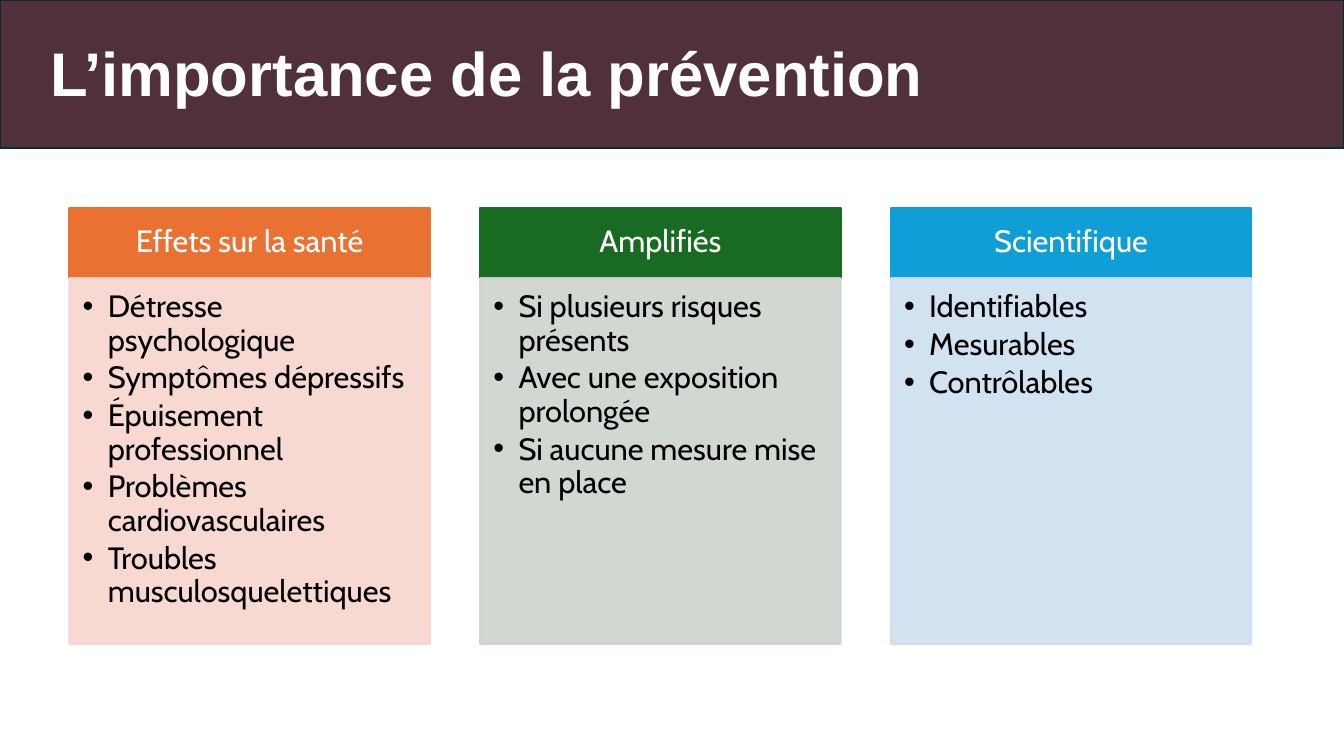
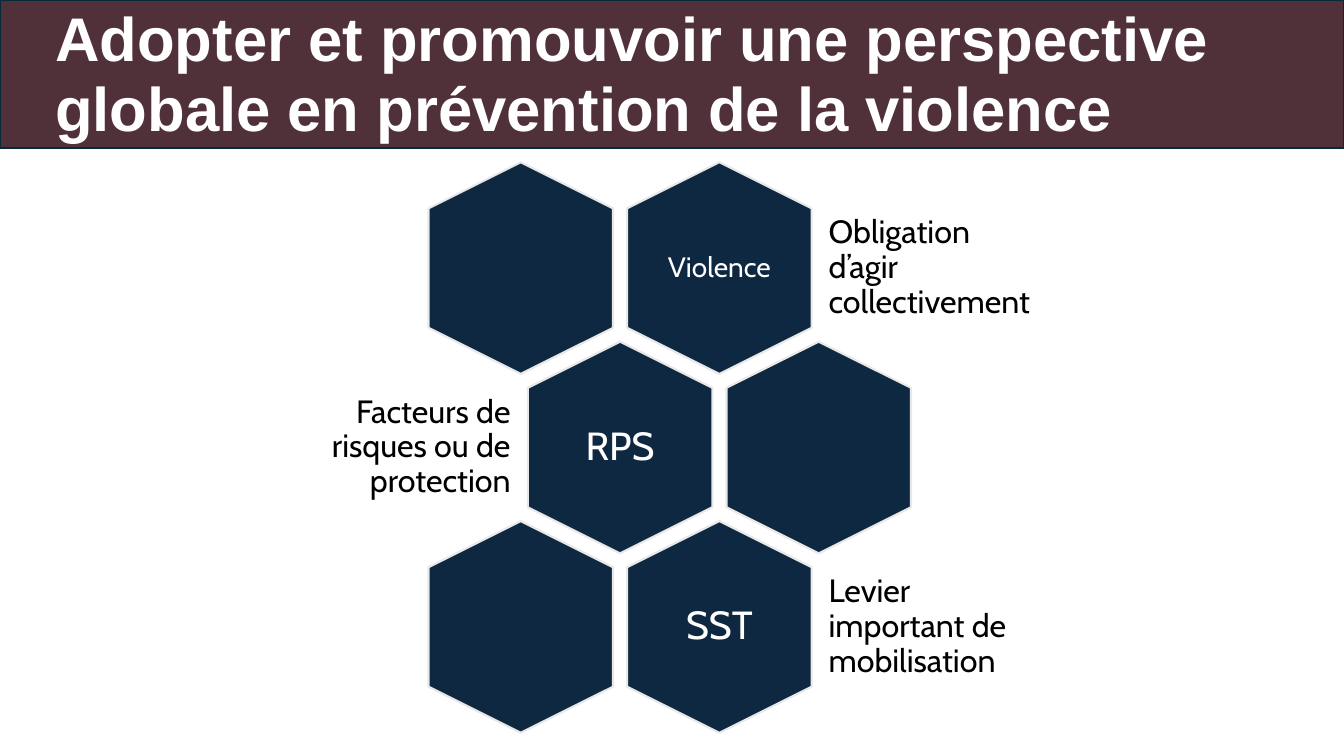
from dataclasses import dataclass

import pptx
import pptx.dml.color
import pptx.enum.shapes
import pptx.enum.text
import pptx.oxml.ns
import pptx.util
from lxml import etree

EMU_PER_PX = 9144
SLIDE_WIDTH, SLIDE_HEIGHT = 1333, 750
ALIGN = pptx.enum.text.PP_ALIGN
ANCHOR = pptx.enum.text.MSO_ANCHOR
SHAPE = pptx.enum.shapes.MSO_SHAPE


@dataclass(frozen=True)
class Theme:
    band: str = "503039"
    band_line: str = "092A39"
    light_text: str = "FFFFFF"
    dark_text: str = "000000"
    hexagon: str = "0E2841"
    hexagon_line: str = "E8E8E8"
    title_font: str = "Arial"
    body_font: str = "Cabin"
    title_size: int = 44
    column_size: int = 22
    caption_size: int = 23
    acronym_size: int = 28
    word_size: int = 20
    line_width: float = 1.5
    line_spacing: float = 0.9
    title_spacing: float = 0.95
    bullet_gap: float = 3.3


THEME = Theme()

# Heading, heading colour, body colour, bullets
COLUMNS = [
    ("Effets sur la santé", "E97132", "F7D5CE", [
        "Détresse psychologique", "Symptômes dépressifs",
        "Épuisement professionnel", "Problèmes cardiovasculaires",
        "Troubles musculosquelettiques"]),
    ("Amplifiés", "196B24", "CCD4CD", [
        "Si plusieurs risques présents", "Avec une exposition prolongée",
        "Si aucune mesure mise en place"]),
    ("Scientifique", "0F9ED5", "CCDFEF", [
        "Identifiables", "Mesurables", "Contrôlables"]),
]

# Labelled column, label, label size, caption
HONEYCOMB_ROWS = [
    (1, "Violence", THEME.word_size, "Obligation d’agir collectivement"),
    (0, "RPS", THEME.acronym_size, "Facteurs de risques ou de protection"),
    (1, "SST", THEME.acronym_size, "Levier important de mobilisation"),
]


def px(length):
    return pptx.util.Emu(round(length * EMU_PER_PX))


def rgb(color):
    return pptx.dml.color.RGBColor.from_string(color)


def set_opacity(fill_parent, percent):
    """Make every solid colour under the element partly transparent."""
    for color in fill_parent.iter(pptx.oxml.ns.qn("a:srgbClr")):
        alpha = etree.SubElement(color, pptx.oxml.ns.qn("a:alpha"))
        alpha.set("val", str(percent * 1000))


def add_block(slide, preset, box, fill, line, opacity=100):
    shape = slide.shapes.add_shape(preset, *map(px, box))
    shape.shadow.inherit = False
    shape.fill.solid()
    shape.fill.fore_color.rgb = rgb(fill)
    shape.line.color.rgb = rgb(line)
    shape.line.width = pptx.util.Pt(THEME.line_width)
    if opacity < 100:
        set_opacity(shape.element.spPr, opacity)
    return shape


def set_frame(shape, insets, anchor=ANCHOR.MIDDLE):
    frame = shape.text_frame
    frame.word_wrap = True
    frame.vertical_anchor = anchor
    (frame.margin_left, frame.margin_top,
     frame.margin_right, frame.margin_bottom) = map(px, insets)
    return frame


def add_bullet(paragraph, indent):
    properties = paragraph._p.get_or_add_pPr()
    properties.set("marL", str(px(indent)))
    properties.set("indent", str(px(-indent)))
    font = etree.SubElement(properties, pptx.oxml.ns.qn("a:buFont"))
    font.set("typeface", THEME.title_font)
    bullet = etree.SubElement(properties, pptx.oxml.ns.qn("a:buChar"))
    bullet.set("char", "•")


def write(paragraph, text, size, color, align=ALIGN.LEFT, font=THEME.body_font,
          bold=False, spacing=THEME.line_spacing):
    paragraph.alignment = align
    paragraph.line_spacing = spacing
    run = paragraph.add_run()
    run.text = text
    run.font.name = font
    run.font.size = pptx.util.Pt(size)
    run.font.bold = bold
    run.font.color.rgb = rgb(color)


def add_label(slide, box, text, size, color, align, inset):
    text_box = slide.shapes.add_textbox(*map(px, box))
    frame = set_frame(text_box, [inset] * 4)
    write(frame.paragraphs[0], text, size, color, align)


def add_titled_slide(presentation, title, title_left):
    slide = presentation.slides.add_slide(presentation.slide_layouts[6])
    add_block(slide, SHAPE.RECTANGLE, (0, 0, SLIDE_WIDTH, 147),
              THEME.band, THEME.band_line)
    text_box = slide.shapes.add_textbox(
        *map(px, (title_left, 2, 1241 - title_left, 145)))
    frame = set_frame(text_box, (10, 5, 10, 5))
    write(frame.paragraphs[0], title, THEME.title_size, THEME.light_text,
          font=THEME.title_font, bold=True, spacing=THEME.title_spacing)
    return slide


def add_column(slide, box, heading, heading_color, body_color, bullets):
    left, top, width, height = box
    heading_height = 70
    header = add_block(slide, SHAPE.RECTANGLE,
                       (left, top, width, heading_height),
                       heading_color, heading_color)
    frame = set_frame(header, (17, 10, 17, 10))
    write(frame.paragraphs[0], heading, THEME.column_size, THEME.light_text,
          ALIGN.CENTER)

    body = add_block(slide, SHAPE.RECTANGLE,
                     (left, top + heading_height, width, height - heading_height),
                     body_color, body_color, opacity=90)
    frame = set_frame(body, (13, 13, 17, 19), ANCHOR.TOP)
    for index, bullet in enumerate(bullets):
        paragraph = frame.add_paragraph() if index else frame.paragraphs[0]
        add_bullet(paragraph, 25)
        paragraph.space_after = pptx.util.Pt(THEME.bullet_gap)
        write(paragraph, bullet, THEME.column_size, THEME.dark_text)


def add_columns(slide, box):
    left, top, width, height = box
    gap = 50
    column_width = (width - gap * (len(COLUMNS) - 1)) / len(COLUMNS)
    for index, column in enumerate(COLUMNS):
        column_left = left + index * (column_width + gap)
        add_column(slide, (column_left, top, column_width, height), *column)


def add_hexagon(slide, center_x, center_y, width, height):
    """Place a hexagon that stands on a point; the box is its visible size."""
    shape = add_block(
        slide, SHAPE.HEXAGON,
        (center_x - height / 2, center_y - width / 2, height, width),
        THEME.hexagon, THEME.hexagon_line)
    shape.adjustments[0] = 0.25
    shape.adjustments[1] = 1.155
    shape.rotation = 90


def add_honeycomb(slide, left, top):
    """Stack rows of two hexagons, every second row moved half a step right."""
    width, height = 183, 210
    step_x, step_y = 197, 178
    label_width, label_height = 126, 145
    caption_width, caption_height, caption_gap = 230, 126, 7

    for row, (labelled, label, size, caption) in enumerate(HONEYCOMB_ROWS):
        center_y = top + height / 2 + row * step_y
        first_x = left + width / 2 + row % 2 * step_x / 2
        for column in range(2):
            add_hexagon(slide, first_x + column * step_x, center_y, width, height)

        center_x = first_x + labelled * step_x
        add_label(slide, (center_x - label_width / 2, center_y - label_height / 2,
                          label_width, label_height),
                  label, size, THEME.light_text, ALIGN.CENTER, 8)

        reach = width / 2 + caption_gap
        if labelled:
            caption_left, align = center_x + reach, ALIGN.LEFT
        else:
            caption_left, align = center_x - reach - caption_width, ALIGN.RIGHT
        add_label(slide, (caption_left, center_y - caption_height / 2,
                          caption_width, caption_height),
                  caption, THEME.caption_size, THEME.dark_text, align, 10)


def main():
    presentation = pptx.Presentation()
    presentation.slide_width = px(SLIDE_WIDTH)
    presentation.slide_height = px(SLIDE_HEIGHT)

    slide = add_titled_slide(presentation, "L’importance de la prévention", 40)
    add_columns(slide, (69, 206, 1172, 433))

    slide = add_titled_slide(
        presentation,
        "Adopter et promouvoir une perspective globale en prévention de la violence",
        45)
    add_honeycomb(slide, 425, 161)

    presentation.save("out.pptx")


if __name__ == "__main__":
    main()
